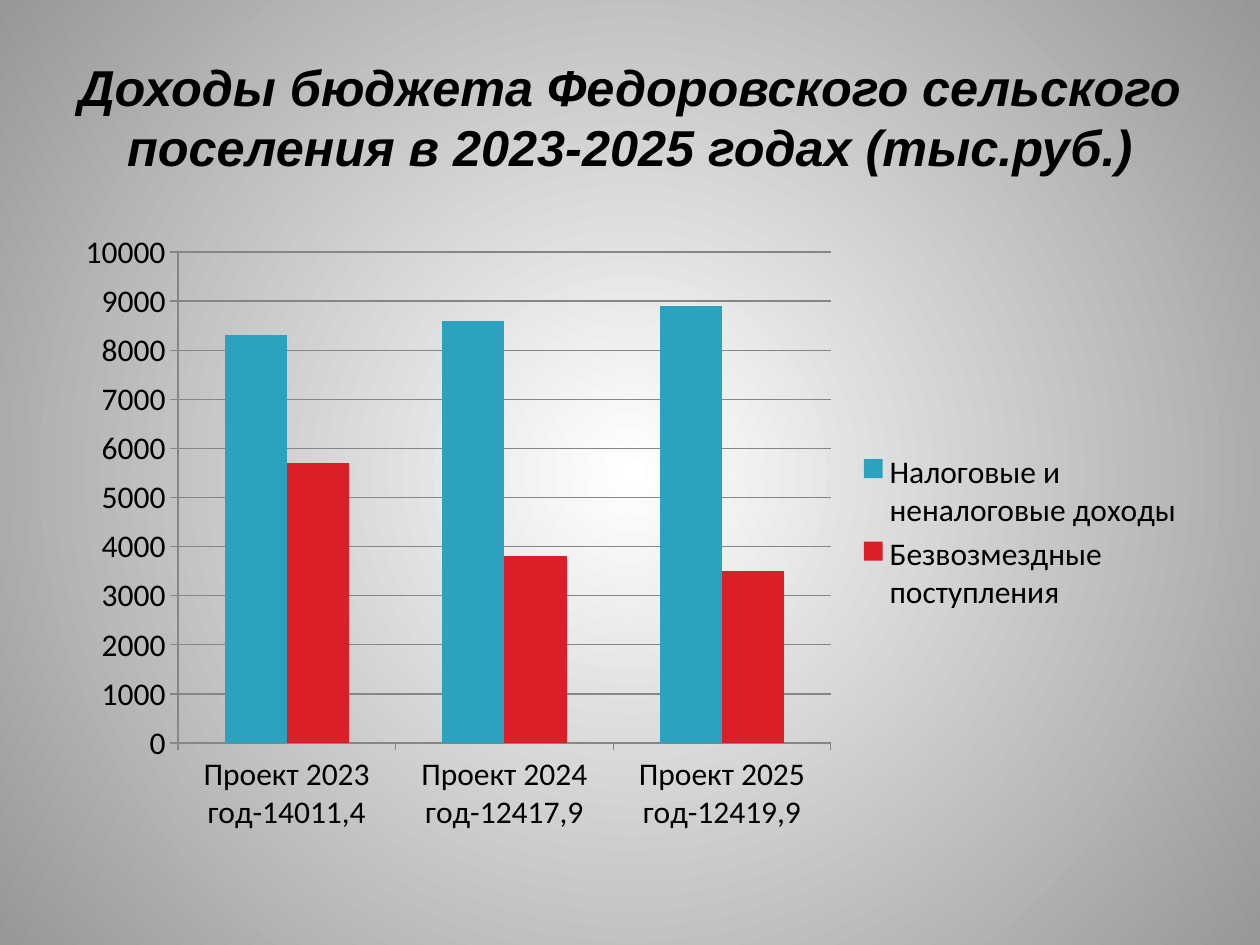
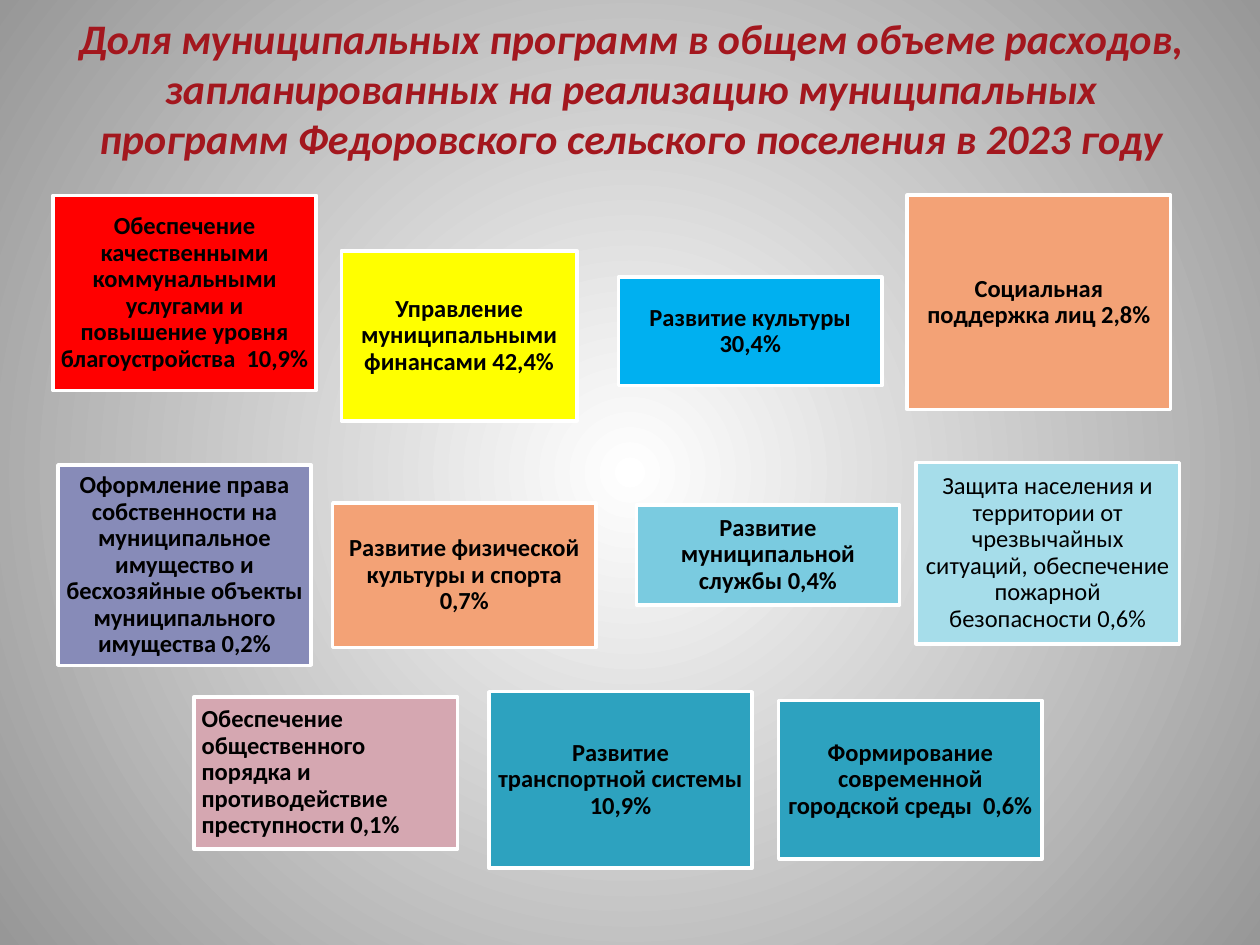
from dataclasses import dataclass

from lxml import etree
from pptx import Presentation
from pptx.chart.data import CategoryChartData
from pptx.dml.color import RGBColor as Rgb
from pptx.enum.chart import XL_CHART_TYPE as ChartType
from pptx.enum.chart import XL_LEGEND_POSITION as LegendPosition
from pptx.enum.chart import XL_TICK_MARK as TickMark
from pptx.enum.shapes import MSO_SHAPE as Shape
from pptx.enum.text import MSO_ANCHOR as Anchor
from pptx.enum.text import PP_ALIGN as Align
from pptx.oxml.ns import qn
from pptx.util import Inches, Pt


@dataclass(frozen=True)
class Theme:
    heading_font: str = "Arial"
    body_font: str = "Calibri"
    chart_title_size: float = 28.8
    program_title_size: float = 24
    chart_size: float = 18
    box_size: float = 14
    text: str = "000000"
    dark_red: str = "A3171E"
    white: str = "FFFFFF"
    edge_gray: str = "979797"
    axis_gray: str = "868686"
    teal: str = "2DA2BF"
    crimson: str = "DA1F28"
    red: str = "FF0000"
    yellow: str = "FFFF00"
    blue: str = "00B0F0"
    peach: str = "F3A276"
    lavender: str = "878BB8"
    aqua: str = "7ACBE0"
    pale_aqua: str = "A6DDEA"
    pink: str = "D5A7B1"


THEME = Theme()
BOX_WIDTH = 2.09
BOX_INSET = 0.06

YEARS = ["Проект 2023 год-14011,4", "Проект 2024 год-12417,9", "Проект 2025 год-12419,9"]
INCOME = [
    ("Налоговые и неналоговые доходы", [8300, 8600, 8900], THEME.teal),
    ("Безвозмездные поступления", [5700, 3800, 3500], THEME.crimson),
]

# Each program: text, fill, (left, top, width, height), then any style exceptions
PROGRAMS = [
    ("Обеспечение качественными коммунальными услугами и повышение уровня "
     "благоустройства  10,9%", THEME.red, (0.42, 1.55, BOX_WIDTH, 1.55), {}),
    ("Управление муниципальными финансами 42,4%", THEME.yellow,
     (2.71, 1.99, 1.87, 1.35), {}),
    ("Развитие культуры 30,4%", THEME.blue, (4.91, 2.2, BOX_WIDTH, 0.86), {}),
    ("Социальная поддержка лиц 2,8%", THEME.peach, (7.2, 1.55, BOX_WIDTH, 1.7), {}),
    ("Оформление права собственности на муниципальное имущество и бесхозяйные "
     "объекты муниципального имущества 0,2%", THEME.lavender,
     (0.46, 3.69, 2.01, 1.59), {}),
    ("Развитие физической культуры и спорта 0,7%", THEME.peach,
     (2.64, 3.99, BOX_WIDTH, 1.15), {}),
    ("Развитие муниципальной службы 0,4%", THEME.aqua, (5.05, 4.01, BOX_WIDTH, 0.79), {}),
    ("Защита населения и территории от чрезвычайных ситуаций, обеспечение "
     "пожарной безопасности 0,6%", THEME.pale_aqua,
     (7.27, 3.67, BOX_WIDTH, 1.44), {"bold": False}),
    ("Обеспечение общественного порядка и противодействие преступности 0,1%",
     THEME.pink, (1.54, 5.53, BOX_WIDTH, 1.21), {"align": Align.LEFT}),
    ("Развитие транспортной системы 10,9%", THEME.teal,
     (3.88, 5.49, BOX_WIDTH, 1.4), {}),
    ("Формирование современной городской среды  0,6%", THEME.teal,
     (6.18, 5.56, BOX_WIDTH, 1.26), {}),
]


def rgb(color):
    return Rgb.from_string(color)


def inches(lengths):
    return [Inches(length) for length in lengths]


def style_font(font, name, size, color, bold=False, italic=False):
    font.name = name
    font.size = Pt(size)
    font.color.rgb = rgb(color)
    font.bold = bold
    font.italic = italic


def set_radial_background(master):
    """Give every slide a gradient that darkens from its centre."""
    fill = master.background.fill
    fill.gradient()
    for stop, color in zip(fill.gradient_stops, (THEME.white, THEME.edge_gray)):
        stop.color.rgb = rgb(color)
    gradient = next(master.element.iter(qn("a:gradFill")))
    linear = gradient.find(qn("a:lin"))
    radial = etree.Element(qn("a:path"))
    radial.set("path", "circle")
    centre = etree.SubElement(radial, qn("a:fillToRect"))
    for side in "ltrb":
        centre.set(side, "50000")
    gradient.replace(linear, radial)


def add_title(page, text, area, font_name, size, color):
    frame = page.shapes.add_textbox(*inches(area)).text_frame
    frame.word_wrap = True
    frame.vertical_anchor = Anchor.MIDDLE
    para = frame.paragraphs[0]
    para.text = text
    para.alignment = Align.CENTER
    style_font(para.font, font_name, size, color, bold=True, italic=True)


def add_program_box(page, text, color, area, bold=True, align=Align.CENTER):
    box = page.shapes.add_shape(Shape.RECTANGLE, *inches(area))
    box.shadow.inherit = False
    box.fill.solid()
    box.fill.fore_color.rgb = rgb(color)
    box.line.color.rgb = rgb(THEME.white)
    box.line.width = Pt(2)

    frame = box.text_frame
    frame.word_wrap = True
    frame.vertical_anchor = Anchor.MIDDLE
    frame.margin_left = frame.margin_right = Inches(BOX_INSET)
    frame.margin_top = frame.margin_bottom = Inches(BOX_INSET)
    para = frame.paragraphs[0]
    para.text = text
    para.alignment = align
    para.line_spacing = 0.9
    style_font(para.font, THEME.body_font, THEME.box_size, THEME.text, bold)


def add_income_chart(page, area):
    data = CategoryChartData()
    data.categories = YEARS
    for name, values, _ in INCOME:
        data.add_series(name, values)
    chart = page.shapes.add_chart(ChartType.COLUMN_CLUSTERED, *inches(area), data).chart
    chart.has_title = False
    style_font(chart.font, THEME.body_font, THEME.chart_size, THEME.text)

    # Columns
    plot = chart.plots[0]
    plot.gap_width = 150
    plot.overlap = 0
    plot.vary_by_categories = False
    for series, (_, _, color) in zip(plot.series, INCOME):
        series.format.fill.solid()
        series.format.fill.fore_color.rgb = rgb(color)

    # Axes and gridlines
    values = chart.value_axis
    values.minimum_scale, values.maximum_scale, values.major_unit = 0, 10000, 1000
    values.has_major_gridlines = True
    values.tick_labels.number_format = "0"
    values.tick_labels.number_format_is_linked = False
    for axis in (chart.category_axis, values):
        axis.major_tick_mark = TickMark.OUTSIDE
        axis.format.line.color.rgb = rgb(THEME.axis_gray)
    values.major_gridlines.format.line.color.rgb = rgb(THEME.axis_gray)

    # Legend
    chart.has_legend = True
    chart.legend.position = LegendPosition.RIGHT
    chart.legend.include_in_layout = False


def add_page(deck):
    return deck.slides.add_slide(deck.slide_layouts[6])


def build_income_page(deck):
    page = add_page(deck)
    add_title(page, "Доходы бюджета Федоровского сельского поселения "
              "в 2023-2025 годах (тыс.руб.)", (0.5, 0.3, 9, 1.25),
              THEME.heading_font, THEME.chart_title_size, THEME.text)
    add_income_chart(page, (0.5, 1.75, 9, 4.95))


def build_programs_page(deck):
    page = add_page(deck)
    add_title(page, "Доля муниципальных программ в общем объеме расходов, "
              "запланированных на реализацию муниципальных программ "
              "Федоровского сельского поселения в 2023 году", (0.51, 0, 9, 1.39),
              THEME.body_font, THEME.program_title_size, THEME.dark_red)
    for text, color, area, exceptions in PROGRAMS:
        add_program_box(page, text, color, area, **exceptions)


def main():
    deck = Presentation()
    deck.slide_width, deck.slide_height = Inches(10), Inches(7.5)
    set_radial_background(deck.slide_master)
    build_income_page(deck)
    build_programs_page(deck)
    deck.save("out.pptx")


if __name__ == "__main__":
    main()
